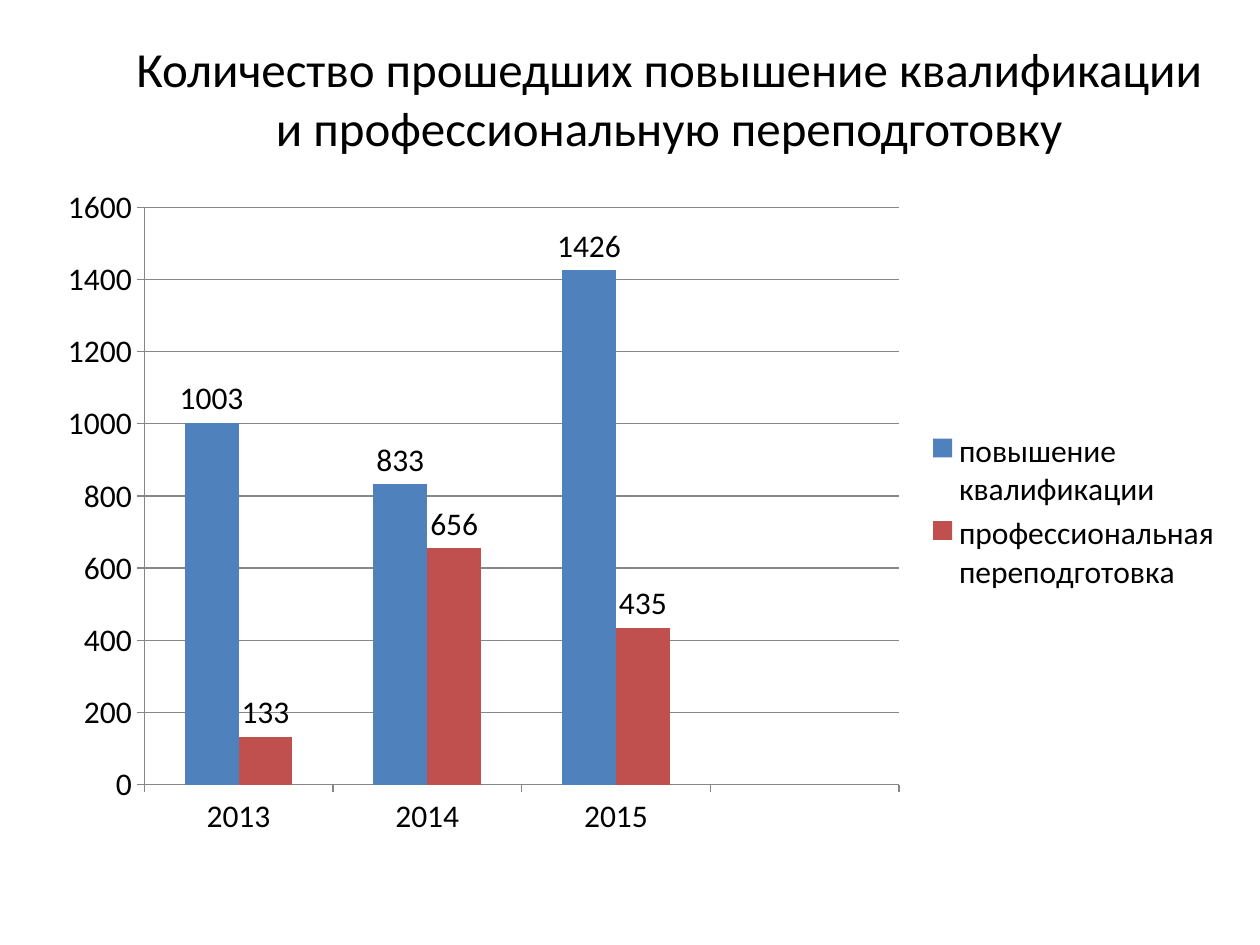
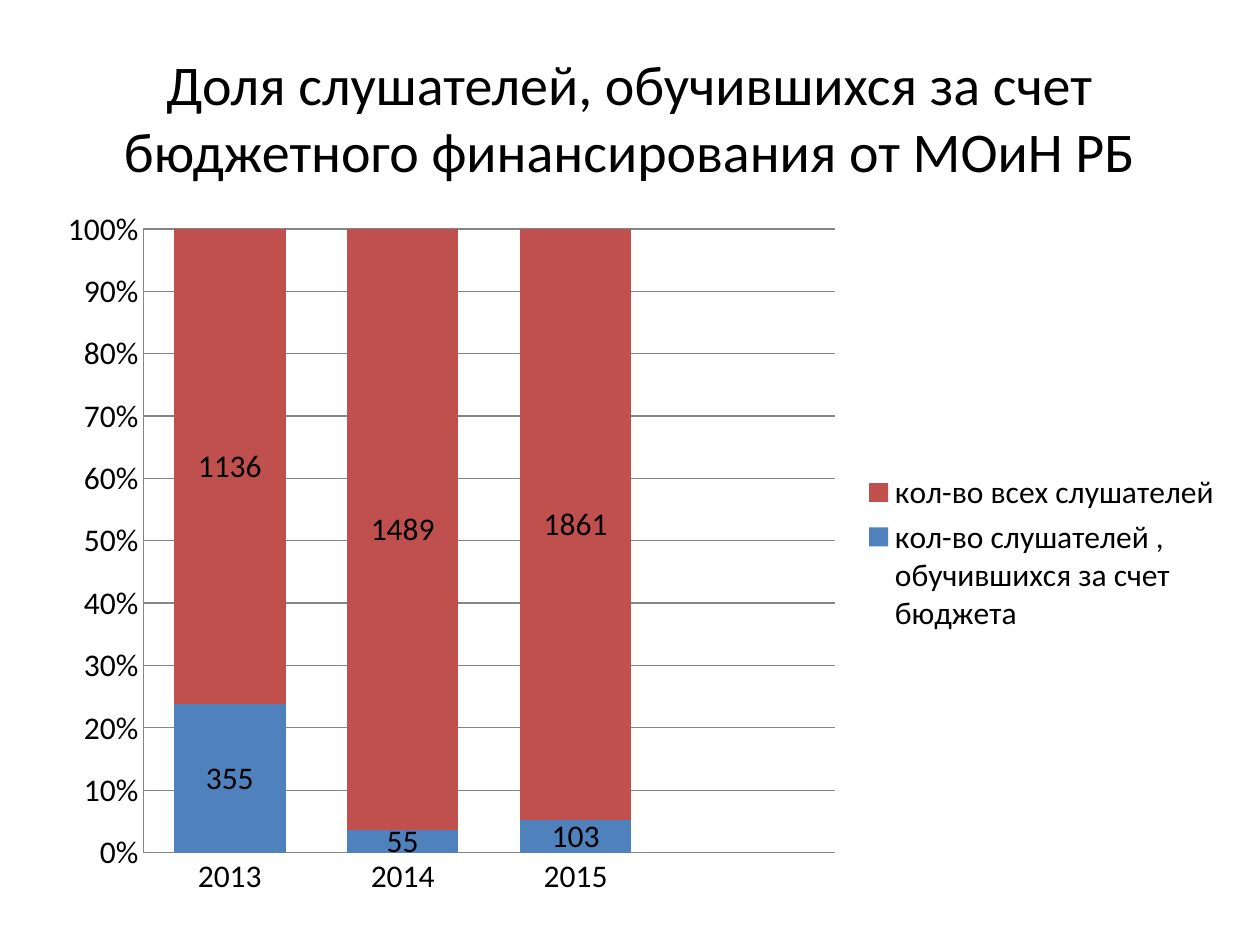
from dataclasses import dataclass

from pptx import Presentation
from pptx.chart.axis import _BaseAxis
from pptx.chart.chart import Chart
from pptx.chart.data import CategoryChartData
from pptx.dml.color import RGBColor
from pptx.enum.chart import XL_CHART_TYPE, XL_LABEL_POSITION, XL_LEGEND_POSITION, XL_TICK_MARK
from pptx.enum.text import MSO_ANCHOR, PP_ALIGN
from pptx.slide import Slide
from pptx.text.text import Font
from pptx.util import Inches, Pt

WIDE, HIGH = Inches(10), Inches(7.5)
FACE, INK, GRID = "Calibri", "000000", "868686"
FILLS = ("4F81BD", "C0504D")
YEARS = ("2013", "2014", "2015", "")
LEFT, SPAN = 0.035, 0.945


@dataclass(frozen=True)
class Box:
    left: float
    top: float
    width: float
    height: float

    def place(self) -> tuple[int, int, int, int]:
        return (int(self.left * WIDE), int(self.top * HIGH),
                int(self.width * WIDE), int(self.height * HIGH))


@dataclass(frozen=True)
class Row:
    name: str
    nums: tuple[int | None, ...]


@dataclass(frozen=True)
class Page:
    title: str
    size: int
    head: Box
    body: Box
    kind: XL_CHART_TYPE
    gap: int
    lap: int
    tick: XL_TICK_MARK
    label: XL_LABEL_POSITION
    form: str
    rows: tuple[Row, ...]


PAGES = (
    Page("Количество прошедших повышение квалификации и профессиональную переподготовку",
         28, Box(0.09, 0.053, 0.882, 0.1), Box(LEFT, 0.185, SPAN, 0.713),
         XL_CHART_TYPE.COLUMN_CLUSTERED, 150, 0, XL_TICK_MARK.OUTSIDE,
         XL_LABEL_POSITION.OUTSIDE_END, "General",
         (Row("повышение квалификации", (1003, 833, 1426, None)),
          Row("профессиональная переподготовка", (133, 656, 435, None)))),
    Page("Доля слушателей, обучившихся за счет бюджетного финансирования от МОиН РБ",
         32, Box(0.05, 0.04, 0.9, 0.167), Box(LEFT, 0.207, SPAN, 0.756),
         XL_CHART_TYPE.COLUMN_STACKED_100, 55, 100, XL_TICK_MARK.NONE,
         XL_LABEL_POSITION.CENTER, "0%",
         (Row("кол-во слушателей , обучившихся за счет бюджета", (355, 55, 103, None)),
          Row("кол-во всех слушателей", (1136, 1489, 1861, None)))),
)


def shade(code: str) -> RGBColor:
    return RGBColor.from_string(code)


def style(font: Font, size: int) -> None:
    font.name, font.size, font.bold = FACE, Pt(size), False
    font.color.rgb = shade(INK)


def add_title(slide: Slide, page: Page) -> None:
    frame = slide.shapes.add_textbox(*page.head.place()).text_frame
    frame.word_wrap = True
    frame.vertical_anchor = MSO_ANCHOR.MIDDLE
    line = frame.paragraphs[0]
    line.text = page.title
    line.alignment = PP_ALIGN.CENTER
    style(line.font, page.size)


def set_axis(axis: _BaseAxis, tick: XL_TICK_MARK) -> None:
    axis.major_tick_mark = tick
    axis.minor_tick_mark = XL_TICK_MARK.NONE
    axis.format.line.color.rgb = shade(GRID)
    axis.format.line.width = Pt(0.75)


def set_bars(chart: Chart, page: Page) -> None:
    plot = chart.plots[0]
    plot.gap_width, plot.overlap = page.gap, page.lap
    plot.vary_by_categories = False
    for bar, fill in zip(plot.series, FILLS):
        bar.format.fill.solid()
        bar.format.fill.fore_color.rgb = shade(fill)
        bar.invert_if_negative = False
        bar.data_labels.show_value = True
        bar.data_labels.position = page.label


def add_graph(slide: Slide, page: Page) -> None:
    data = CategoryChartData()
    data.categories = YEARS
    for row in page.rows:
        data.add_series(row.name, row.nums)
    chart = slide.shapes.add_chart(page.kind, *page.body.place(), data).chart
    style(chart.font, 18)
    chart.has_title = False
    chart.has_legend = True
    chart.legend.position = XL_LEGEND_POSITION.RIGHT
    chart.legend.include_in_layout = False
    for axis in (chart.category_axis, chart.value_axis):
        set_axis(axis, page.tick)
    scale = chart.value_axis
    scale.has_major_gridlines = True
    scale.major_gridlines.format.line.color.rgb = shade(GRID)
    scale.major_gridlines.format.line.width = Pt(0.75)
    scale.tick_labels.number_format = page.form
    scale.tick_labels.number_format_is_linked = False
    set_bars(chart, page)


def main() -> None:
    deck = Presentation()
    deck.slide_width, deck.slide_height = WIDE, HIGH
    for page in PAGES:
        slide = deck.slides.add_slide(deck.slide_layouts[6])
        add_title(slide, page)
        add_graph(slide, page)
    deck.save("out.pptx")


if __name__ == "__main__":
    main()
